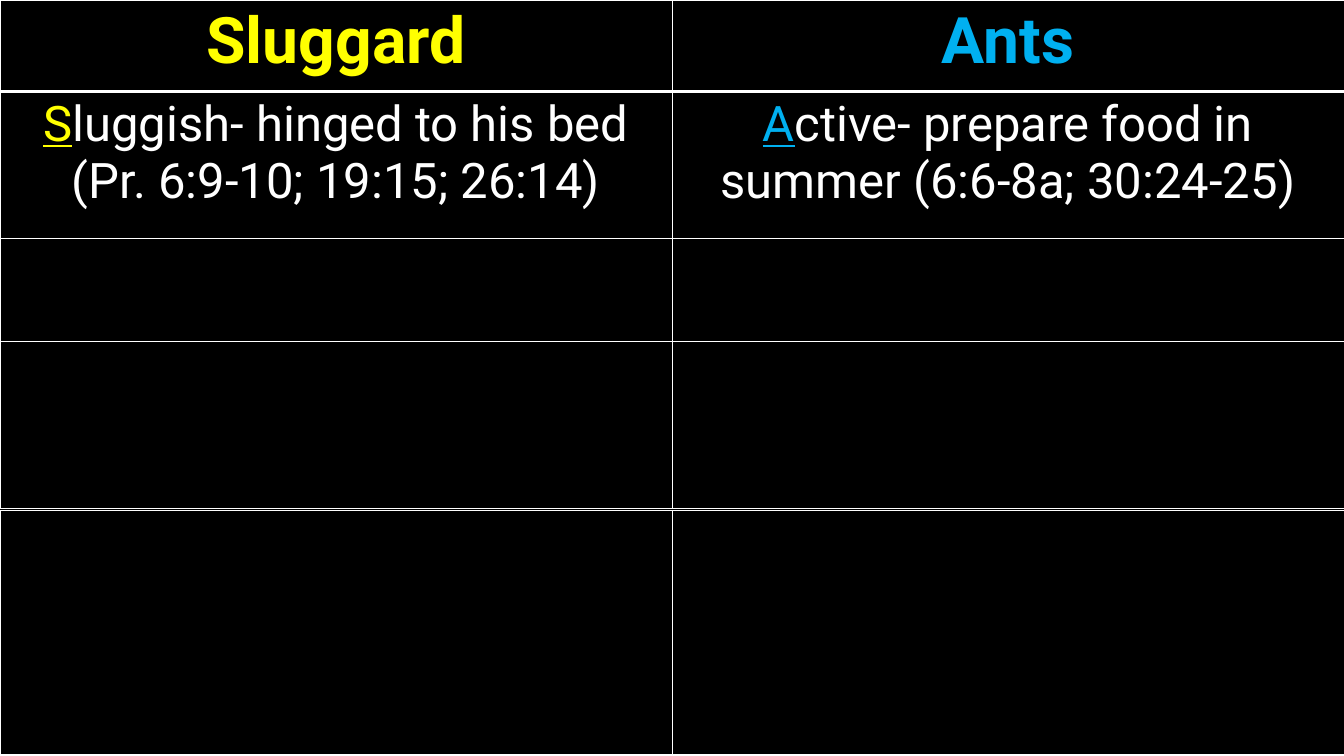
import pptx
import pptx.util
import pptx.dml.color
import pptx.enum.text
import pptx.oxml
import pptx.oxml.ns

WIDTH, HEIGHT = 16, 9
FONT = "Roboto"
COLORS = {"black": "000000", "white": "FFFFFF", "sluggard": "FFFF00", "ants": "00B0F0"}
HEADING_SIZE, POINT_SIZE = 55, 42
COLUMNS = 2
COMPARISON_ROWS = [1.09, 1.75, 1.23, 1.99]
LOWER_TOP = 6.08

# Each side: heading, colour, lines of its point
SIDES = [
    ("Sluggard", "sluggard", ["Sluggish- hinged to his bed", "(Pr. 6:9-10; 19:15; 26:14)"]),
    ("Ants", "ants", ["Active- prepare food in summer (6:6-8a; 30:24-25)"]),
]


def rgb(name):
    return pptx.dml.color.RGBColor.from_string(COLORS[name])


def set_borders(cell, bottom):
    """Draw white lines round a cell, with a given bottom width in points."""
    properties = cell._tc.get_or_add_tcPr()
    widths = {"lnL": 1, "lnR": 1, "lnT": 1, "lnB": bottom}
    for position, (side, width) in enumerate(widths.items()):
        line = pptx.oxml.parse_xml(
            f'<a:{side} {pptx.oxml.ns.nsdecls("a")} w="{pptx.util.Pt(width)}">'
            f'<a:solidFill><a:srgbClr val="{COLORS["white"]}"/></a:solidFill></a:{side}>'
        )
        properties.insert(position, line)


def add_grid(page, top, heights, heavy_row):
    """Add a full-width black table; heavy_row has the thick bottom line."""
    inches = pptx.util.Inches
    frame = page.shapes.add_table(
        len(heights), COLUMNS, 0, inches(top), inches(WIDTH), inches(sum(heights))
    )
    table = frame.table
    table.first_row = table.horz_banding = False
    for row, height in enumerate(heights):
        table.rows[row].height = inches(height)
        for cell in table.rows[row].cells:
            cell.fill.solid()
            cell.fill.fore_color.rgb = rgb("black")
            set_borders(cell, 3 if row == heavy_row else 1)
    return table


def add_span(para, text, size, color, bold=False, underline=False):
    span = para.add_run()
    span.text = text
    span.font.name = FONT
    span.font.size = pptx.util.Pt(size)
    span.font.color.rgb = rgb(color)
    span.font.bold = bold
    span.font.underline = underline


def fill_side(table, column, heading, color, lines):
    """Write a heading and its point, whose first letter is picked out."""
    center = pptx.enum.text.PP_ALIGN.CENTER
    title = table.cell(0, column).text_frame.paragraphs[0]
    title.alignment = center
    add_span(title, heading, HEADING_SIZE, color, bold=True)

    box = table.cell(1, column).text_frame
    for index, line in enumerate(lines):
        para = box.add_paragraph() if index else box.paragraphs[0]
        para.alignment = center
        if index == 0:
            add_span(para, line[0], POINT_SIZE, color, underline=True)
            line = line[1:]
        add_span(para, line, POINT_SIZE, "white")


def main():
    deck = pptx.Presentation()
    deck.slide_width = pptx.util.Inches(WIDTH)
    deck.slide_height = pptx.util.Inches(HEIGHT)
    page = deck.slides.add_slide(deck.slide_layouts[6])
    page.background.fill.solid()
    page.background.fill.fore_color.rgb = rgb("black")

    # Comparison of the two sides
    comparison = add_grid(page, 0, COMPARISON_ROWS, heavy_row=0)
    for column, side in enumerate(SIDES):
        fill_side(comparison, column, *side)

    # Empty table down to the foot of the page
    add_grid(page, LOWER_TOP, [HEIGHT - LOWER_TOP], heavy_row=0)

    deck.save("out.pptx")


if __name__ == "__main__":
    main()
